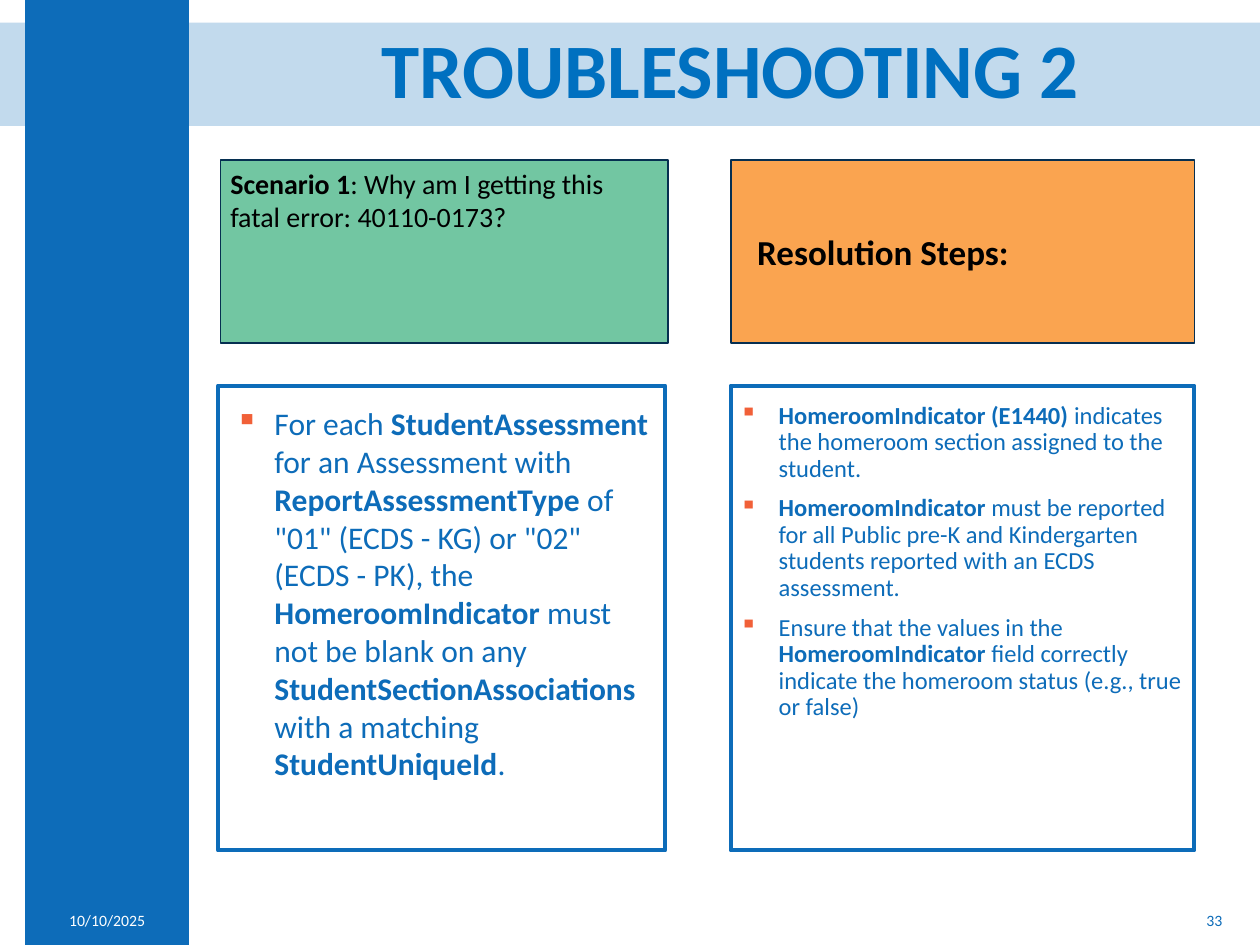
from lxml.etree import SubElement as Sub
from pptx import Presentation
from pptx.dml.color import RGBColor as Rgb
from pptx.enum.shapes import MSO_SHAPE as Shape
from pptx.enum.text import MSO_ANCHOR as Anchor, PP_ALIGN as Align
from pptx.oxml.ns import qn
from pptx.util import Inches, Pt

TITLE = "**TROUBLESHOOTING 2**"
DATE, PAGE = "10/10/2025", "33"
ASK = "**Scenario 1**: Why am I getting this fatal error: 40110-0173?"
HEAD = "**Resolution Steps:**"
RULE = (
    'For each **StudentAssessment** for an Assessment with '
    '**ReportAssessmentType** of "01" (ECDS - KG) or "02" (ECDS - PK), '
    'the **HomeroomIndicator** must not be blank on any '
    '**StudentSectionAssociations** with a matching **StudentUniqueId**.'
)
STEPS = [
    "**HomeroomIndicator (E1440)\u00a0**indicates the homeroom section "
    "assigned to the student.",
    "**HomeroomIndicator** must be reported for all Public pre-K and "
    "Kindergarten students reported with an ECDS assessment.",
    "Ensure that the values in the **HomeroomIndicator** field correctly "
    "indicate the homeroom status (e.g., true or false)",
]

THEME = {
    "font": "Calibri",
    "blue": "0D6CB9", "title": "0070C0", "navy": "062F51",
    "green": "72C6A2", "amber": "FAA450", "mark": "F16038",
    "black": "000000", "white": "FFFFFF",
    "huge": 44, "head": 20, "body": 18, "ask": 16, "step": 14, "foot": 9,
}
COLS, ROWS = 100, 75
WIDE, HIGH = Inches(10), Inches(7.5)
BAR = (2, 13)
LEFT, RIGHT = (17.3, 35.5), (58, 36.8)
TOP, LOW, FOOT = (12.7, 14.5), (30.6, 36.9), (71, 4)
TIGHT = (0.07, 0.04)


def tint(name):
    return Rgb.from_string(THEME[name])


def place(col, row):
    x, w = (int(n * WIDE / COLS) for n in col)
    y, h = (int(n * HIGH / ROWS) for n in row)
    return x, y, w, h


def box(page, col, row, fill=None, line=None, width=1, alpha=None):
    item = page.shapes.add_shape(Shape.RECTANGLE, *place(col, row))
    item.shadow.inherit = False
    if fill:
        item.fill.solid()
        item.fill.fore_color.rgb = tint(fill)
        if alpha:
            clr = item.fill._xPr.find(".//" + qn("a:srgbClr"))
            Sub(clr, qn("a:alpha"), val=str(alpha * 1000))
    else:
        item.fill.background()
    if line:
        item.line.color.rgb = tint(line)
        item.line.width = Pt(width)
    else:
        item.line.fill.background()
    return item


def bullet(para):
    props = para._p.get_or_add_pPr()
    props.set("marL", str(Inches(0.31)))
    props.set("indent", str(-Inches(0.31)))
    clr = Sub(props, qn("a:buClr"))
    Sub(clr, qn("a:srgbClr"), val=THEME["mark"])
    Sub(props, qn("a:buChar"), char="▪")


def write(item, text, size="body", color="blue", align=Align.LEFT,
          anchor=Anchor.TOP, pad=(0.1, 0.05), mark=False, lead=None, gap=0):
    frame = item.text_frame
    frame.word_wrap = True
    frame.vertical_anchor = anchor
    frame.margin_left = frame.margin_right = Inches(pad[0])
    frame.margin_top = frame.margin_bottom = Inches(pad[1])
    for i, part in enumerate([text] if isinstance(text, str) else text):
        para = frame.add_paragraph() if i else frame.paragraphs[0]
        if mark:
            bullet(para)
        para.alignment = align
        if lead:
            para.line_spacing = lead
        if i and gap:
            para.space_before = Pt(gap)
        for k, bit in enumerate(part.split("**")):
            if bit:
                run = para.add_run()
                run.text = bit
                font = run.font
                font.name, font.size = THEME["font"], Pt(THEME[size])
                font.bold, font.color.rgb = k % 2 == 1, tint(color)


def label(page, col, row, text, **form):
    write(page.shapes.add_textbox(*place(col, row)), text, **form)


def main():
    deck = Presentation()
    deck.slide_width, deck.slide_height = WIDE, HIGH
    page = deck.slides.add_slide(deck.slide_layouts[6])
    mid = Anchor.MIDDLE

    box(page, (0, COLS), (1.8, 8.2), fill="blue", alpha=25)
    box(page, BAR, (0, ROWS), fill="blue")
    label(page, BAR, FOOT, DATE, size="foot", color="white",
          align=Align.CENTER, anchor=mid, pad=TIGHT)
    label(page, (19, 78), (1.7, 8.2), TITLE, size="huge", color="title",
          align=Align.CENTER, anchor=mid, lead=0.9)

    box(page, (17.5, 35.5), TOP, fill="green", line="navy")
    label(page, (17.3, 35), (12.7, 6.4), ASK, size="ask", color="black")
    box(page, LEFT, LOW, line="blue", width=2.25)
    label(page, (17.7, 34.8), (31.6, 31.3), RULE, mark=True)

    head = box(page, RIGHT, TOP, fill="amber", line="navy")
    write(head, HEAD, size="head", color="black", anchor=mid,
          pad=(0.21, 0.05))
    label(page, RIGHT, (31.6, 36.9), STEPS, size="step", pad=TIGHT,
          mark=True, lead=0.9, gap=7.5)
    box(page, RIGHT, LOW, line="blue", width=2.25)
    label(page, (75.5, 22.5), FOOT, PAGE, size="foot",
          align=Align.RIGHT, anchor=mid)
    deck.save("out.pptx")


if __name__ == "__main__":
    main()
